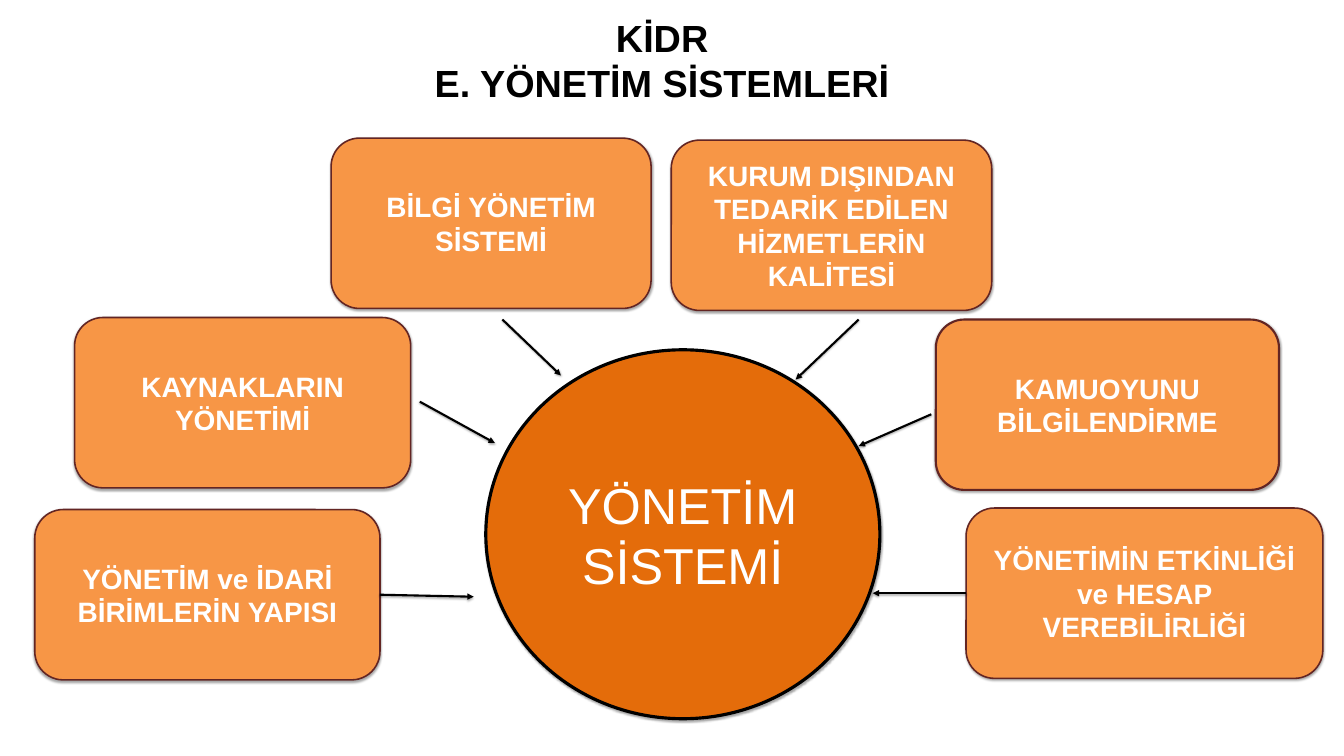
from lxml.etree import SubElement
from pptx import Presentation
from pptx.dml.color import RGBColor
from pptx.enum.shapes import MSO_CONNECTOR, MSO_SHAPE
from pptx.enum.text import MSO_ANCHOR, MSO_AUTO_SIZE, PP_ALIGN
from pptx.oxml.ns import qn
from pptx.util import Pt

PX = 9144
FONT = "Arial"
BOX_HEIGHT = 338
LEFT, RIGHT = 1, 3
COLORS = {
    "black": "000000",
    "white": "FFFFFF",
    "theme": "F79646",
    "theme_line": "632523",
    "center": "E46C0A",
}
THEMES = [
    ("resources", "KAYNAKLARIN YÖNETİMİ", 148, 630, 667, 2.25),
    ("information", "BİLGİ YÖNETİM SİSTEMİ", 657, 274, 635, 2.25),
    ("structure", "YÖNETİM ve İDARİ BİRİMLERİN YAPISI", 69, 1011, 685, 2.25),
    ("suppliers", "KURUM DIŞINDAN TEDARİK EDİLEN HİZMETLERİN KALİTESİ", 1332, 278, 636, 2.25),
    ("accountability", "YÖNETİMİN ETKİNLİĞİ ve HESAP VEREBİLİRLİĞİ", 1917, 1008, 708, 2.25),
    ("public", "KAMUOYUNU BİLGİLENDİRME", 1857, 634, 681, 3),
]
ARROWS = [
    ((1704, 634), (1579, 753), None),
    ((1848, 822), (1704, 885), None),
    ((997, 634), (1113, 745), None),
    ((754, 1180), (940, 1184), ("structure", RIGHT)),
    ((833, 797), (982, 879), None),
    ((1917, 1177), (1732, 1177), ("accountability", LEFT)),
]


def scale(*lengths):
    """Turn px lengths into EMU."""
    return [length * PX for length in lengths]


def color(name):
    """Look up a named colour."""
    return RGBColor.from_string(COLORS[name])


def write_text(shape, lines, size, color_name, bold=False, anchor=MSO_ANCHOR.MIDDLE):
    """Fill a shape with centred paragraphs in one format."""
    frame = shape.text_frame
    frame.word_wrap = True
    frame.vertical_anchor = anchor
    frame.margin_left, frame.margin_right = scale(20, 20)
    frame.margin_top, frame.margin_bottom = scale(10, 10)
    frame.text = "\n".join(lines)
    for paragraph in frame.paragraphs:
        paragraph.alignment = PP_ALIGN.CENTER
        font = paragraph.runs[0].font
        font.name, font.size, font.bold = FONT, Pt(size), bold
        font.color.rgb = color(color_name)


def add_shadow(shape):
    """Give a shape or connector a soft shadow straight below it."""
    effects = SubElement(shape._element.spPr, qn("a:effectLst"))
    shadow = SubElement(
        effects, qn("a:outerShdw"), blurRad=str(Pt(3.1)), dist=str(Pt(1.8)),
        dir="5400000", rotWithShape="0",
    )
    shade = SubElement(shadow, qn("a:srgbClr"), val=COLORS["black"])
    SubElement(shade, qn("a:alpha"), val="35000")


def add_panel(slide, kind, box, fill, line, line_width):
    """Add a filled, outlined and shadowed preset shape."""
    shape = slide.shapes.add_shape(kind, *scale(*box))
    shape.fill.solid()
    shape.fill.fore_color.rgb = color(fill)
    shape.line.color.rgb = color(line)
    shape.line.width = Pt(line_width)
    add_shadow(shape)
    return shape


def add_title(slide, box):
    """Add the two-line heading."""
    title = slide.shapes.add_textbox(*scale(*box))
    write_text(title, ["KİDR", "E. YÖNETİM SİSTEMLERİ"], size=54,
               color_name="black", bold=True, anchor=MSO_ANCHOR.TOP)
    title.text_frame.auto_size = MSO_AUTO_SIZE.SHAPE_TO_FIT_TEXT


def add_theme(slide, box, text, line_width):
    """Add one rounded theme box."""
    shape = add_panel(slide, MSO_SHAPE.ROUNDED_RECTANGLE, box, "theme", "theme_line", line_width)
    write_text(shape, [text], size=40, color_name="white", bold=True)
    return shape


def add_center(slide, box):
    """Add the central ellipse."""
    ellipse = add_panel(slide, MSO_SHAPE.OVAL, box, "center", "black", 4.5)
    write_text(ellipse, ["YÖNETİM SİSTEMİ"], size=72, color_name="white")


def add_arrow(slide, start, end, source=None, site=None):
    """Add an arrow, joined to its source shape when one is given."""
    arrow = slide.shapes.add_connector(MSO_CONNECTOR.STRAIGHT, *scale(*start, *end))
    if source is not None:
        arrow.begin_connect(source, site)
    arrow.line.color.rgb = color("black")
    arrow.line.width = Pt(3)
    SubElement(arrow.line._get_or_add_ln(), qn("a:tailEnd"), type="triangle")
    add_shadow(arrow)


def main():
    """Build and save the slide."""
    presentation = Presentation()
    presentation.slide_width, presentation.slide_height = scale(2667, 1500)
    slide = presentation.slides.add_slide(presentation.slide_layouts[6])
    add_title(slide, (270, 19, 2088, 202))
    themes = {}
    for name, text, left, top, width, line_width in THEMES:
        themes[name] = add_theme(slide, (left, top, width, BOX_HEIGHT), text, line_width)
    add_center(slide, (964, 694, 782, 732))
    for start, end, joint in ARROWS:
        if joint:
            name, site = joint
            add_arrow(slide, start, end, themes[name], site)
        else:
            add_arrow(slide, start, end)
    presentation.save("out.pptx")


if __name__ == "__main__":
    main()
